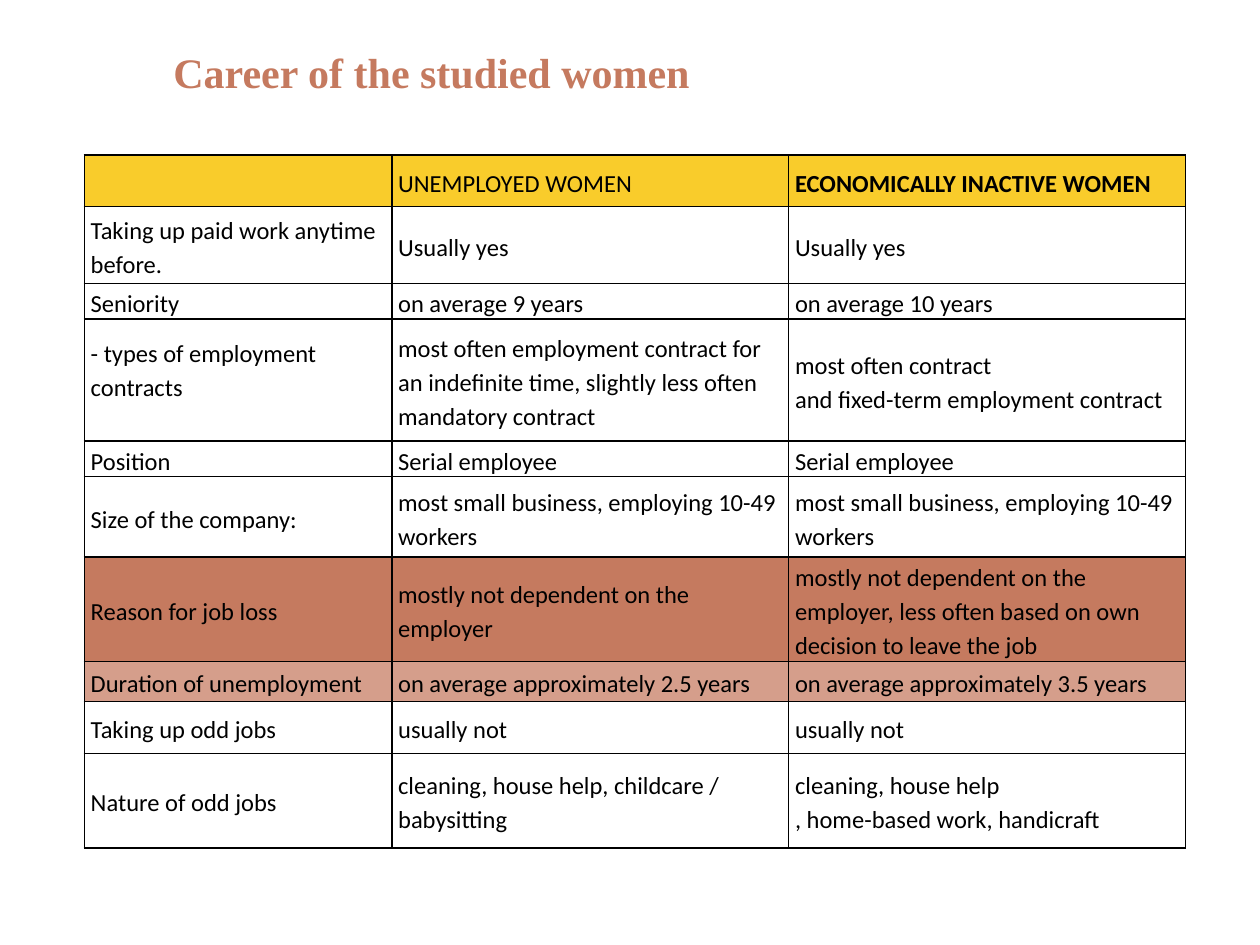
"""Build a slide with a table comparing the careers of two groups of women."""
from lxml.etree import SubElement as Sub
from pptx import Presentation as Deck
from pptx.dml.color import RGBColor as RGB
from pptx.enum.text import MSO_ANCHOR as Anchor, PP_ALIGN as Align
from pptx.oxml.ns import qn
from pptx.util import Inches, Pt

BLACK = RGB(0x00, 0x00, 0x00)
GOLD = RGB(0xF9, 0xCC, 0x2B)
RUST = RGB(0xC5, 0x7A, 0x5F)
ROSE = RGB(0xD5, 0x9E, 0x8B)


def write(frame, text, font="Calibri", size=14, color=BLACK, bold=False,
          align=Align.LEFT, space=1.15):
    frame.text = text
    para = frame.paragraphs[0]
    para.alignment = align
    para.line_spacing = space
    for style in [para.font] + [run.font for run in para.runs]:
        style.name = font
        style.size = Pt(size)
        style.bold = bold
        style.color.rgb = color


def frame_cell(cell):
    props = cell._tc.get_or_add_tcPr()
    for side in ("lnL", "lnR", "lnT", "lnB"):
        line = Sub(props, qn(f"a:{side}"), w=str(Pt(1)))
        fill = Sub(line, qn("a:solidFill"))
        Sub(fill, qn("a:srgbClr"), val=str(BLACK))


deck = Deck()
deck.slide_width, deck.slide_height = Inches(10), Inches(7.5)
COL, ROW = deck.slide_width / 100, deck.slide_height / 100
slide = deck.slides.add_slide(deck.slide_layouts[5])

title = slide.shapes.title
title.left, title.top = int(1.2 * COL), int(1.73 * ROW)
title.width, title.height = int(66.1 * COL), int(11.6 * ROW)
title.text_frame.vertical_anchor = Anchor.MIDDLE
write(title.text_frame, "Career of the studied women", font="Times New Roman",
      size=24, color=RUST, bold=True, align=Align.CENTER, space=1.0)

rows = [
    (5.47, GOLD, "", "UNEMPLOYED WOMEN", "ECONOMICALLY INACTIVE WOMEN"),
    (8.13, None, "Taking up paid work anytime before.",
     "Usually yes", "Usually yes"),
    (2.67, None, "Seniority", "on average 9 years", "on average 10 years"),
    (12.93, None, "- types of employment contracts",
     "most often employment contract for an indefinite time, "
     "slightly less often mandatory contract",
     "most often contract \vand fixed-term employment contract"),
    (2.67, None, "Position", "Serial employee", "Serial employee"),
    (8.53, None, "Size of the company:",
     "most small business, employing 10-49 workers",
     "most small business, employing 10-49 workers"),
    (10, RUST, "Reason for job loss", "mostly not dependent on the employer",
     "mostly not dependent on the employer, "
     "less often based on own decision to leave the job"),
    (4.27, ROSE, "Duration of unemployment",
     "on average approximately 2.5 years", "on average approximately 3.5 years"),
    (5.47, None, "Taking up odd jobs", "usually not", "usually not"),
    (10, None, "Nature of odd jobs",
     "cleaning, house help, childcare / babysitting",
     "cleaning, house help \v, home-based work, handicraft"),
]
widths = [24.4, 31.5, 31.5]
high = sum(row[0] for row in rows)
table = slide.shapes.add_table(
    len(rows), len(widths), int(6.7 * COL), int(16.4 * ROW),
    int(sum(widths) * COL), int(high * ROW)).table
table.horz_banding = False
for col, width in zip(table.columns, widths):
    col.width = int(width * COL)

for r, (tall, tint, *texts) in enumerate(rows):
    table.rows[r].height = int(tall * ROW)
    for c, text in enumerate(texts):
        cell = table.cell(r, c)
        cell.vertical_anchor = Anchor.MIDDLE
        cell.margin_left = cell.margin_right = int(0.5 * COL)
        cell.margin_top, cell.margin_bottom = int(0.13 * ROW), 0
        frame_cell(cell)
        if tint:
            cell.fill.solid()
            cell.fill.fore_color.rgb = tint
        else:
            cell.fill.background()
        write(cell.text_frame, text, bold=(r == 0 and c == 2))

table.cell(3, 0).margin_bottom = int(2.5 * ROW)

deck.save("out.pptx")
